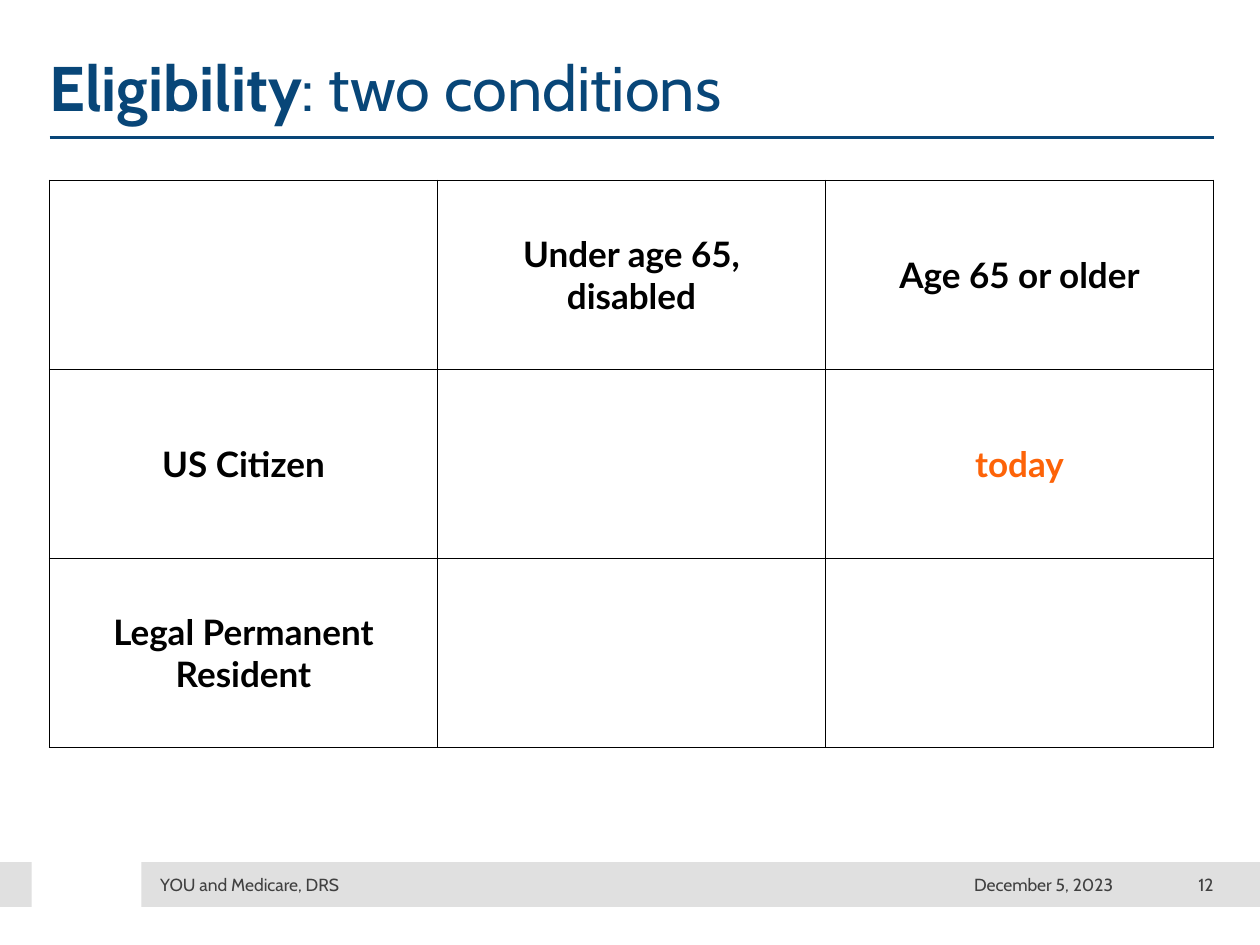
from lxml.etree import SubElement
from pptx import Presentation
from pptx.dml.color import RGBColor
from pptx.enum.shapes import MSO_CONNECTOR as CONN, MSO_SHAPE as SHAPE
from pptx.enum.text import MSO_ANCHOR as ANCHOR, MSO_AUTO_SIZE as AUTO, PP_ALIGN as ALIGN
from pptx.oxml.ns import qn
from pptx.util import Pt

NAVY = RGBColor(0x08, 0x46, 0x78)
ORANGE = RGBColor(0xFD, 0x63, 0x08)
BLACK = RGBColor(0, 0, 0)
DARK = RGBColor(0x40, 0x40, 0x40)
BAND = RGBColor(0xE0, 0xE0, 0xE0)

TITLE = [("Eligibility", True), (": two conditions", False)]
TABLE = [
    ["", "Under age 65,\ndisabled", "Age 65 or older"],
    ["US Citizen", "", "today"],
    ["Legal Permanent Resident", "", ""],
]
HIGHLIGHT = "today"
# text, left, width, alignment
FOOTER = [
    ("YOU and Medicare, DRS", 91.5, 285, ALIGN.LEFT),
    ("December 5, 2023", 468, 168, ALIGN.RIGHT),
    ("12", 643, 50.5, ALIGN.RIGHT),
]
BANDS = [(80.8, 639.2), (0, 18.2)]  # left, width

LEFT, WIDTH = 28.3, 665.2
TITLE_TOP, RULE_Y = 26, 78.5
TABLE_TOP, ROW_H = 103, 108
BAND_TOP, BAND_H = 492.6, 25.6
FOOTER_TOP, FOOTER_H = 497.5, 16

TITLE_FONT = {"name": "Cabin", "size": Pt(36)}
CELL_FONT = {"name": "Lato", "size": Pt(20), "bold": True}
FOOTER_FONT = {"name": "Cabin", "size": Pt(10)}


def set_font(font, color, formats):
    for key, value in formats.items():
        setattr(font, key, value)
    font.color.rgb = color


def set_frame(tf):
    """Zero margins, wrapped, middle-anchored, fixed size."""
    for side in ("left", "right", "top", "bottom"):
        setattr(tf, f"margin_{side}", 0)
    tf.word_wrap = True
    tf.auto_size = AUTO.NONE
    tf.vertical_anchor = ANCHOR.MIDDLE


def add_title(s):
    sp = s.shapes.title
    sp.left, sp.top, sp.width, sp.height = map(Pt, (LEFT, TITLE_TOP, WIDTH, RULE_Y - TITLE_TOP))
    set_frame(sp.text_frame)
    p = sp.text_frame.paragraphs[0]
    p.alignment = ALIGN.LEFT
    p.line_spacing = 0.9
    for text, bold in TITLE:
        r = p.add_run()
        r.text = text
        set_font(r.font, NAVY, TITLE_FONT | {"bold": bold})


def add_rule(s):
    line = s.shapes.add_connector(CONN.STRAIGHT, Pt(LEFT), Pt(RULE_Y), Pt(LEFT + WIDTH), Pt(RULE_Y))
    line.line.color.rgb = NAVY
    line.line.width = Pt(2)
    SubElement(line._element.spPr, qn("a:effectLst"))


def add_borders(cell):
    tc_pr = cell._tc.get_or_add_tcPr()
    for side in ("lnL", "lnR", "lnT", "lnB"):
        ln = SubElement(tc_pr, qn(f"a:{side}"), w=str(Pt(1)))
        fill = SubElement(ln, qn("a:solidFill"))
        SubElement(fill, qn("a:srgbClr"), val=str(BLACK))


def add_grid(s):
    rows, cols = len(TABLE), len(TABLE[0])
    frame = s.shapes.add_table(rows, cols, Pt(LEFT), Pt(TABLE_TOP), Pt(WIDTH), Pt(ROW_H * rows))
    table = frame.table
    table.first_row = table.horz_banding = False
    for i, row in enumerate(TABLE):
        for j, text in enumerate(row):
            cell = table.cell(i, j)
            add_borders(cell)
            cell.fill.background()
            cell.vertical_anchor = ANCHOR.MIDDLE
            cell.text = text
            color = ORANGE if text == HIGHLIGHT else BLACK
            for p in cell.text_frame.paragraphs:
                p.alignment = ALIGN.CENTER
                set_font(p.font, color, CELL_FONT)


def add_footer(s):
    for left, width in BANDS:
        sp = s.shapes.add_shape(SHAPE.RECTANGLE, Pt(left), Pt(BAND_TOP), Pt(width), Pt(BAND_H))
        sp.fill.solid()
        sp.fill.fore_color.rgb = BAND
        sp.line.fill.background()
        sp.shadow.inherit = False
    for text, left, width, align in FOOTER:
        tf = s.shapes.add_textbox(Pt(left), Pt(FOOTER_TOP), Pt(width), Pt(FOOTER_H)).text_frame
        set_frame(tf)
        p = tf.paragraphs[0]
        p.text = text
        p.alignment = align
        set_font(p.font, DARK, FOOTER_FONT)


def main():
    prs = Presentation()
    prs.slide_width, prs.slide_height = Pt(720), Pt(540)
    s = prs.slides.add_slide(prs.slide_layouts[5])
    add_title(s)
    add_rule(s)
    add_grid(s)
    add_footer(s)
    prs.save("out.pptx")


if __name__ == "__main__":
    main()
